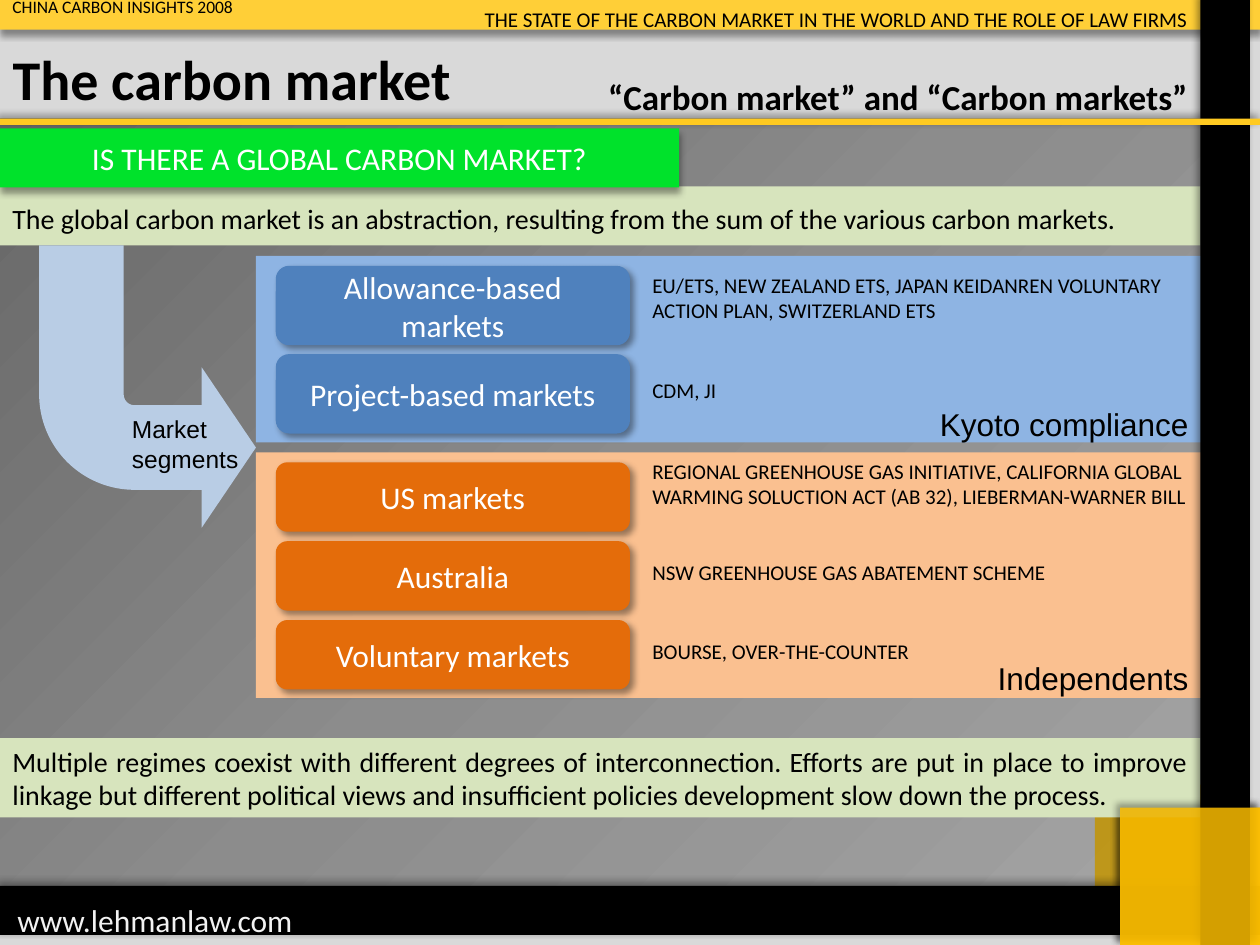
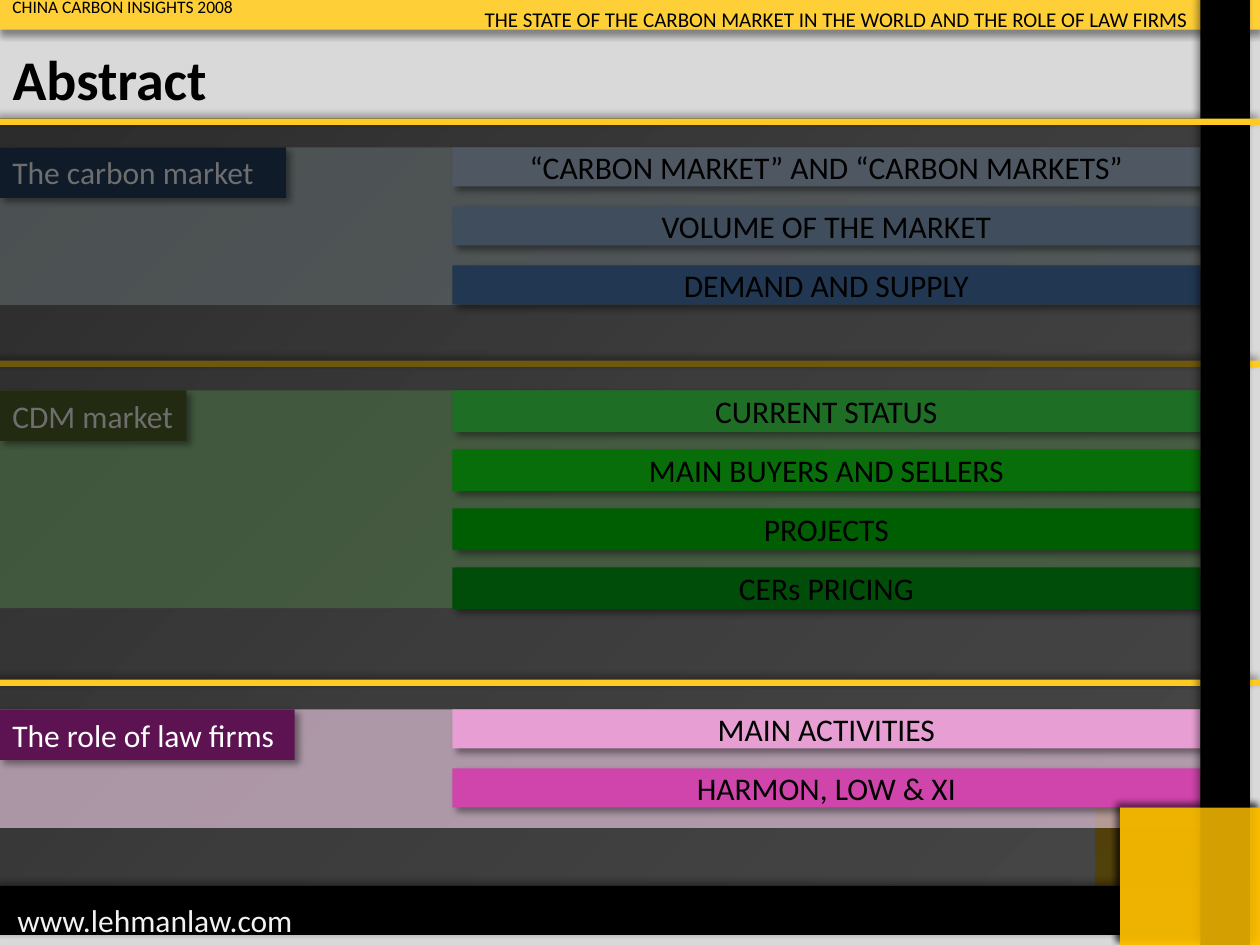
from copy import deepcopy

from lxml import etree
from pptx import Presentation
from pptx.dml.color import RGBColor
from pptx.enum.shapes import MSO_SHAPE
from pptx.enum.text import MSO_ANCHOR, MSO_AUTO_SIZE, PP_ALIGN
from pptx.oxml.ns import qn
from pptx.util import Cm, Pt

RECT, ROUND, BENT = MSO_SHAPE.RECTANGLE, MSO_SHAPE.ROUNDED_RECTANGLE, MSO_SHAPE.BENT_ARROW
TOP, MIDDLE = MSO_ANCHOR.TOP, MSO_ANCHOR.MIDDLE
LEFT, CENTER, RIGHT, JUSTIFY = PP_ALIGN.LEFT, PP_ALIGN.CENTER, PP_ALIGN.RIGHT, PP_ALIGN.JUSTIFY
FIXED = MSO_AUTO_SIZE.NONE

BLACK = RGBColor(0x00, 0x00, 0x00)
WHITE = RGBColor(0xFF, 0xFF, 0xFF)
OFF_WHITE = RGBColor(0xF2, 0xF2, 0xF2)
SILVER = RGBColor(0xD9, 0xD9, 0xD9)
DARK_GREY = RGBColor(0x62, 0x62, 0x62)
MID_GREY = RGBColor(0x8C, 0x8C, 0x8C)
LIGHT_GREY = RGBColor(0xA6, 0xA6, 0xA6)
YELLOW = RGBColor(0xFF, 0xCF, 0x37)
LINE_GOLD = RGBColor(0xFF, 0xCA, 0x21)
GOLD = RGBColor(0xFF, 0xC0, 0x00)
DARK_GOLD = RGBColor(0xC4, 0x95, 0x00)
PALE_GREEN = RGBColor(0xD7, 0xE4, 0xBD)
BRIGHT_GREEN = RGBColor(0x00, 0xE2, 0x2B)
PEACH = RGBColor(0xFA, 0xC0, 0x90)
ORANGE = RGBColor(0xE4, 0x6C, 0x0A)
SKY = RGBColor(0x8E, 0xB4, 0xE3)
BLUE = RGBColor(0x4F, 0x81, 0xBD)
SOFT_BLUE = RGBColor(0x95, 0xB3, 0xD7)
PALE_BLUE = RGBColor(0xB9, 0xCD, 0xE5)
ICE = RGBColor(0xDB, 0xEE, 0xF4)
NAVY = RGBColor(0x25, 0x40, 0x61)
MINT = RGBColor(0xAD, 0xFF, 0x9F)
OLIVE = RGBColor(0x4F, 0x62, 0x28)
GREEN_1 = RGBColor(0x47, 0xFF, 0x59)
GREEN_2 = RGBColor(0x11, 0xFF, 0x17)
GREEN_3 = RGBColor(0x00, 0xDA, 0x05)
GREEN_4 = RGBColor(0x00, 0xB4, 0x15)
ROSE = RGBColor(0xF3, 0xD1, 0xEA)
PINK = RGBColor(0xE6, 0x9E, 0xD3)
MAGENTA = RGBColor(0xCF, 0x45, 0xAB)
PLUM = RGBColor(0x5D, 0x13, 0x52)

PAGE_WIDTH, PAGE_HEIGHT = 25.4, 19.05
BODY_WIDTH = 24.2
GOLD_SQUARE = (22.58, 16.28, 2.82, 2.77)


def add_block(page, area, color, shadow=None, opacity=None, kind=RECT):
    block = page.shapes.add_shape(kind, *map(Cm, area))
    block.fill.solid()
    block.fill.fore_color.rgb = color
    block.line.fill.background()
    block.shadow.inherit = False
    properties = block.element.spPr
    if opacity is not None:
        tint = properties.find(qn("a:solidFill"))[0]
        etree.SubElement(tint, qn("a:alpha"), val=str(opacity * 1000))
    if shadow is not None:
        effects = properties.find(qn("a:effectLst"))
        cast = etree.SubElement(effects, qn("a:outerShdw"), blurRad=str(Pt(4)), dist=str(Pt(3)),
                                dir=str(shadow * 60000), algn="ctr", rotWithShape="0")
        shade = etree.SubElement(cast, qn("a:srgbClr"), val=str(BLACK))
        etree.SubElement(shade, qn("a:alpha"), val="40000")
    return block


def write(box, text, size, color=BLACK, align=LEFT, anchor=TOP, font="Calibri", bold=False):
    frame = box.text_frame
    frame.text = text
    frame.word_wrap = True
    frame.auto_size = FIXED
    frame.vertical_anchor = anchor
    para = frame.paragraphs[0]
    para.alignment = align
    para.font.name = font
    para.font.size = Pt(size)
    para.font.bold = bold
    para.font.color.rgb = color


deck = Presentation()
deck.slide_width, deck.slide_height = Cm(PAGE_WIDTH), Cm(PAGE_HEIGHT)
title_only = deck.slide_layouts[5]
market_page = deck.slides.add_slide(title_only)
abstract_page = deck.slides.add_slide(title_only)

for page in (market_page, abstract_page):
    backdrop = add_block(page, (0, 0, PAGE_WIDTH, PAGE_HEIGHT), MID_GREY)
    backdrop.fill.gradient()
    backdrop.fill.gradient_angle = 315
    stop_list = backdrop.element.spPr.find(qn("a:gradFill")).find(qn("a:gsLst"))
    stop_list.append(deepcopy(stop_list[0]))
    greys = ((0, DARK_GREY), (0.5, MID_GREY), (1, LIGHT_GREY))
    for stop, (position, grey) in zip(backdrop.fill.gradient_stops, greys):
        stop.position = position
        stop.color.rgb = grey
    add_block(page, (25.17, 0, 0.23, PAGE_HEIGHT), SILVER)
    add_block(page, (22.07, 15.82, 2.82, 2.77), DARK_GOLD, opacity=83)
    add_block(page, (0, 0, 25, 2.39), SILVER)
    add_block(page, (0, 18.75, PAGE_WIDTH, 0.3), SILVER)
    add_block(page, (0, 0, PAGE_WIDTH, 0.6), YELLOW, shadow=90)
    add_block(page, (0, 17.86, PAGE_WIDTH, 0.99), BLACK, shadow=225)
    add_block(page, GOLD_SQUARE, GOLD, shadow=225, opacity=83)
    address = page.shapes.add_textbox(0, Cm(18.03), Cm(6.15), Cm(1.02))
    write(address, "www.lehmanlaw.com", 18, OFF_WHITE, RIGHT)

add_block(market_page, (0, 14.88, BODY_WIDTH, 1.6), PALE_GREEN)
add_block(market_page, (5.16, 9.12, 19.05, 4.95), PEACH)
add_block(market_page, (5.16, 5.16, 19.05, 3.76), SKY)
add_block(market_page, (0, 3.76, BODY_WIDTH, 1.19), PALE_GREEN)
question = add_block(market_page, (0, 2.59, 13.69, 1.19), BRIGHT_GREEN, shadow=90)
write(question, "IS THERE A GLOBAL CARBON MARKET?", 18, WHITE, CENTER, MIDDLE)

arrow = add_block(market_page, (0.79, 4.95, 4.37, 5.69), PALE_BLUE, kind=BENT)
arrow.element.spPr.find(qn("a:xfrm")).set("flipV", "1")
for index, value in enumerate((0.39, 0.37, 0.25, 0.44)):
    arrow.adjustments[index] = value

segments = (
    ("Allowance-based markets", BLUE, 5.36, 1.6, 5.36,
     "EU/ETS, NEW ZEALAND ETS, JAPAN KEIDANREN VOLUNTARY ACTION PLAN, SWITZERLAND ETS"),
    ("Project-based markets", BLUE, 7.14, 1.6, 7.49, "CDM, JI"),
    ("US markets", ORANGE, 9.32, 1.4, 9.12,
     "REGIONAL GREENHOUSE GAS INITIATIVE, CALIFORNIA GLOBAL WARMING SOLUCTION ACT (AB 32), "
     "LIEBERMAN-WARNER BILL"),
    ("Australia", ORANGE, 10.91, 1.4, 11.15, "NSW GREENHOUSE GAS ABATEMENT SCHEME"),
    ("Voluntary markets", ORANGE, 12.5, 1.4, 12.75, "BOURSE, OVER-THE-COUNTER"),
)
for name, color, top, height, schemes_top, schemes in segments:
    button = add_block(market_page, (5.56, top, 7.14, height), color, shadow=45, kind=ROUND)
    write(button, name, 18, WHITE, CENTER, MIDDLE)
    box = market_page.shapes.add_textbox(Cm(12.9), Cm(schemes_top), Cm(11.3), Cm(0.76))
    write(box, schemes, 12)

captions = (
    ((0, 3.94, BODY_WIDTH, 0.95), 16, JUSTIFY, "Calibri", False,
     "The global carbon market is an abstraction, resulting from the sum of the various "
     "carbon markets."),
    ((0, 14.88, BODY_WIDTH, 1.63), 16, JUSTIFY, "Calibri", False,
     "Multiple regimes coexist with different degrees of interconnection. Efforts are put in "
     "place to improve linkage but different political views and insufficient policies "
     "development slow down the process."),
    ((0, 1.4, BODY_WIDTH, 1.12), 20, RIGHT, "Calibri", True,
     "“Carbon market” and “Carbon markets”"),
    ((15.29, 8.05, 8.92, 1.02), 18, RIGHT, "Arial", False, "Kyoto compliance"),
    ((15.29, 13.16, 8.92, 1.02), 18, RIGHT, "Arial", False, "Independents"),
    ((2.41, 8.23, 3.76, 1.45), 14, LEFT, "Arial", False, "Market segments"),
)
for area, size, align, font, bold, text in captions:
    box = market_page.shapes.add_textbox(*map(Cm, area))
    write(box, text, size, align=align, font=font, bold=bold)

sections = (
    ("The carbon market", 2.97, 3.18, ICE, NAVY, 5.77, 0.79, (
        ("“CARBON MARKET” AND “CARBON MARKETS”", PALE_BLUE),
        ("VOLUME OF THE MARKET", SOFT_BLUE),
        ("DEMAND AND SUPPLY", BLUE))),
    ("CDM market", 7.87, 4.39, MINT, OLIVE, 3.76, 0.84, (
        ("CURRENT STATUS", GREEN_1),
        ("MAIN BUYERS AND SELLERS", GREEN_2),
        ("PROJECTS", GREEN_3),
        ("CERs PRICING", GREEN_4))),
    ("The role of law firms", 14.3, 2.39, ROSE, PLUM, 5.94, 0.79, (
        ("MAIN ACTIVITIES", PINK),
        ("HARMON, LOW & XI", MAGENTA))),
)
current = sections[-1]
for section in sections:
    heading, top, height, panel_color, tag_color, tag_width, topic_height, topics = section
    if section is current:
        add_block(abstract_page, (0, 2.39, BODY_WIDTH, 15.47), BLACK, opacity=57)
    if section is not sections[0]:
        add_block(abstract_page, (0, top - 0.6, PAGE_WIDTH, 0.13), LINE_GOLD, shadow=225)
    add_block(abstract_page, (0, top, BODY_WIDTH, height), panel_color, opacity=62)
    for row, (topic, color) in enumerate(topics):
        bar = add_block(abstract_page, (9.12, top + row * 1.19, 15.08, topic_height), color, shadow=45)
        write(bar, topic, 18, BLACK, CENTER, MIDDLE)
    tag = add_block(abstract_page, (0, top, tag_width, 1.02), tag_color, shadow=45)
    write(tag, heading, 18, WHITE)
add_block(abstract_page, GOLD_SQUARE, GOLD, shadow=225, opacity=83)

for page, heading in ((market_page, "The carbon market"), (abstract_page, "Abstract")):
    add_block(page, (BODY_WIDTH, 0, 1, PAGE_HEIGHT), BLACK, shadow=225)
    add_block(page, GOLD_SQUARE, GOLD, shadow=225, opacity=83)
    add_block(page, (0, 2.39, PAGE_WIDTH, 0.13), LINE_GOLD, shadow=225)
    title = page.shapes.title
    title.left, title.top, title.width, title.height = map(Cm, (0, 0.76, BODY_WIDTH, 1.63))
    title.element.getparent().append(title.element)
    write(title, heading, 32, bold=True)
    topic_line = page.shapes.add_textbox(0, 0, Cm(BODY_WIDTH), Cm(0.79))
    write(topic_line, "THE STATE OF THE CARBON MARKET IN THE WORLD AND THE ROLE OF LAW FIRMS", 12, align=RIGHT)
    event = page.shapes.add_textbox(0, Cm(-0.2), Cm(9.73), Cm(0.69))
    write(event, "CHINA CARBON INSIGHTS 2008", 10)

deck.save("out.pptx")
